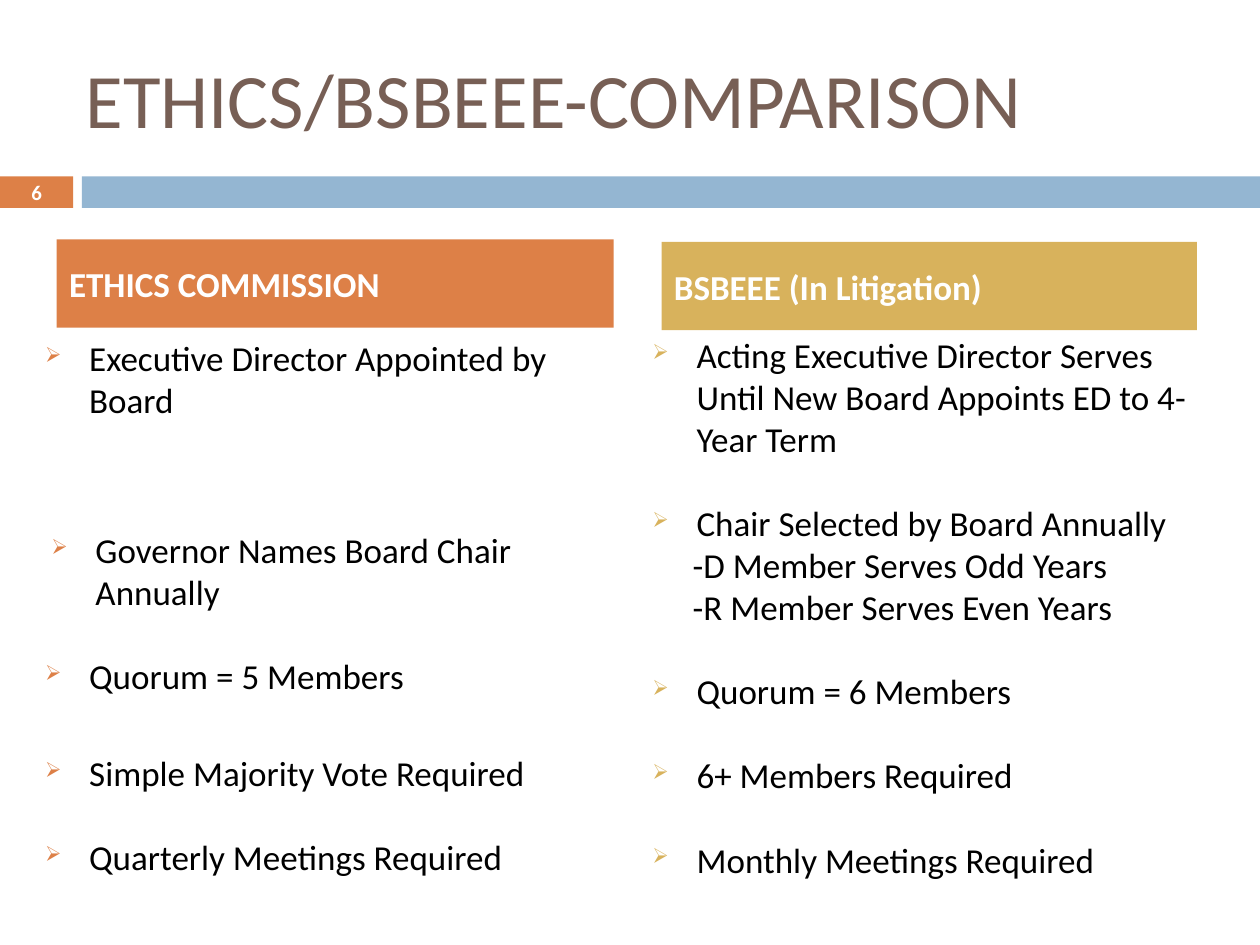
from pptx import Presentation
from pptx.dml.color import RGBColor
from pptx.enum.shapes import MSO_SHAPE
from pptx.enum.text import MSO_ANCHOR, PP_ALIGN
from pptx.oxml import parse_xml
from pptx.oxml.ns import nsdecls
from pptx.util import Pt

RECT = MSO_SHAPE.RECTANGLE
TOP, MIDDLE = MSO_ANCHOR.TOP, MSO_ANCHOR.MIDDLE
LEFT, CENTER = PP_ALIGN.LEFT, PP_ALIGN.CENTER
COLORS = {"orange": "DD8047", "blue": "94B6D2", "gold": "D8B25C",
          "brown": "775F55", "white": "FFFFFF", "black": "000000"}
HANG = 25.2   # hanging indent of a bullet
GAP = 24      # one line of space between points
SUB = 23      # indent of a line without bullet

# Each point: text, space before, left indent, bulleted
ETHICS = [
    ("Executive Director Appointed by Board", 0, HANG, True),
    ("Governor Names Board Chair Annually", 62, 28.8, True),
    ("Quorum = 5 Members", GAP, HANG, True),
    ("Simple Majority Vote Required", 31, HANG, True),
    ("Quarterly Meetings Required", GAP, HANG, True),
]
BSBEEE = [
    ("Acting Executive Director Serves Until New Board Appoints ED to 4-Year Term",
     0, HANG, True),
    ("Chair Selected by Board Annually", GAP, HANG, True),
    ("-D Member Serves Odd Years", 0, SUB, False),
    ("-R Member Serves Even Years", 0, SUB, False),
    ("Quorum = 6 Members", GAP, HANG, True),
    ("6+ Members Required", GAP, HANG, True),
    ("Monthly Meetings Required", GAP, HANG, True),
]


def rgb(name):
    return RGBColor.from_string(COLORS[name])


def write(para, text, size=20, color="black", bold=False, align=LEFT, before=0):
    para.alignment = align
    para.space_before = Pt(before)
    run = para.add_run()
    run.text = text
    font = run.font
    font.name, font.size, font.bold = "Calibri", Pt(size), bold
    font.color.rgb = rgb(color)


def indent(para, left, color=None):
    """Indent a paragraph, with a hanging arrow bullet if a color is given."""
    props = para._p.get_or_add_pPr()
    props.set("marL", str(Pt(left)))
    if color is None:
        return
    props.set("indent", str(-Pt(HANG)))
    for tag in (f'<a:buClr {{}}><a:srgbClr val="{COLORS[color]}"/></a:buClr>',
                '<a:buSzPct {} val="60000"/>',
                '<a:buFont {} typeface="Wingdings"/>',
                '<a:buChar {} char="➢"/>'):
        if "buFont" not in tag:
            props.append(parse_xml(tag.format(nsdecls("a"))))


class Deck:
    def __init__(self, wide, high):
        self.show = Presentation()
        self.show.slide_width, self.show.slide_height = Pt(wide), Pt(high)
        self.slide = self.show.slides.add_slide(self.show.slide_layouts[6])

    def bar(self, box, color):
        shape = self.slide.shapes.add_shape(RECT, *map(Pt, box))
        shape.shadow.inherit = False
        shape.fill.solid()
        shape.fill.fore_color.rgb = rgb(color)
        shape.line.fill.background()
        return shape

    def header(self, box, text, color):
        frame = self.bar(box, color).text_frame
        frame.word_wrap, frame.vertical_anchor = True, MIDDLE
        write(frame.paragraphs[0], text, color="white", bold=True, before=7)

    def frame(self, box, anchor=TOP):
        frame = self.slide.shapes.add_textbox(*map(Pt, box)).text_frame
        frame.word_wrap, frame.vertical_anchor = True, anchor
        return frame

    def label(self, box, text, **style):
        write(self.frame(box, MIDDLE).paragraphs[0], text, **style)

    def points(self, box, items, color):
        frame = self.frame(box)
        for i, (text, before, left, mark) in enumerate(items):
            para = frame.add_paragraph() if i else frame.paragraphs[0]
            write(para, text, before=before)
            indent(para, left, color if mark else None)


def main():
    deck = Deck(720, 540)
    deck.bar((0, 100.8, 41.76, 18), "orange")
    deck.bar((46.8, 100.8, 673.2, 18), "blue")
    deck.label((41.76, 21.6, 642.24, 68.4), "ETHICS/BSBEEE-COMPARISON",
               size=44, color="brown")
    deck.label((0, 100.08, 41.76, 19.44), "6", size=11.9, color="white",
               bold=True, align=CENTER)
    deck.header((32.4, 136.8, 318.24, 50.4), "ETHICS COMMISSION", "orange")
    deck.header((378, 138.24, 306, 50.4), "BSBEEE (In Litigation)", "gold")
    deck.points((18.72, 188.64, 347.76, 339.12), ETHICS, "orange")
    deck.points((365.76, 187.2, 329.76, 329.76), BSBEEE, "gold")
    deck.show.save("out.pptx")


if __name__ == "__main__":
    main()
